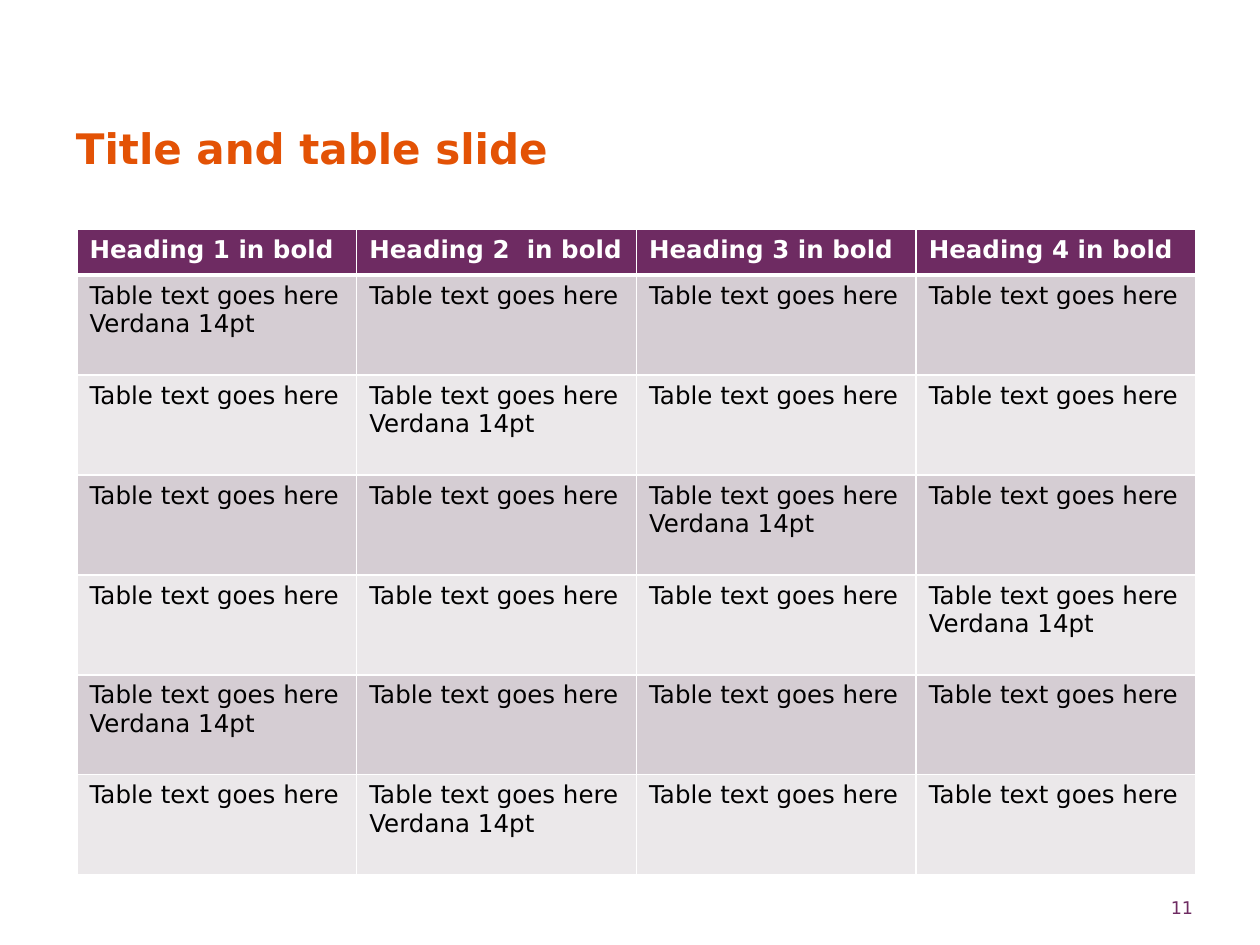
from lxml.etree import SubElement
from pptx import Presentation
from pptx.dml.color import RGBColor
from pptx.enum.text import PP_ALIGN
from pptx.oxml.ns import qn
from pptx.util import Emu, Pt

PX = 914400 / 126
COLORS = {
    "title": "E35205",
    "purple": "6E2B62",
    "band_dark": "D5CDD3",
    "band_light": "EBE8EA",
    "text": "000000",
    "white": "FFFFFF",
}
HEADINGS = ["Heading 1 in bold", "Heading 2  in bold", "Heading 3 in bold", "Heading 4 in bold"]
BODY_ROWS = 6
CELL_TEXT = "Table text goes here"
FONT_NOTE = "Verdana 14pt"


def px(length):
    return Emu(round(length * PX))


class SlideBuilder:
    def __init__(self, slide, font_name="DejaVu Sans"):
        self.slide = slide
        self.font_name = font_name

    def style(self, paragraph, size, color, bold=False):
        font = paragraph.font
        font.name = self.font_name
        font.size = Pt(size)
        font.bold = bold
        font.color.rgb = RGBColor.from_string(COLORS[color])

    def text(self, box, content, size, color, bold=False, align=PP_ALIGN.LEFT, line_spacing=None):
        shape = self.slide.shapes.add_textbox(*map(px, box))
        frame = shape.text_frame
        frame.word_wrap = True
        frame.margin_left = frame.margin_top = frame.margin_right = frame.margin_bottom = 0
        paragraph = frame.paragraphs[0]
        paragraph.text = content
        paragraph.alignment = align
        if line_spacing:
            paragraph.line_spacing = Pt(line_spacing)
        self.style(paragraph, size, color, bold)

    def borders(self, cell, widths):
        """Add white borders; widths maps a side (L, R, T, B) to points."""
        properties = cell._tc.get_or_add_tcPr()
        for side, width in widths.items():
            line = SubElement(properties, qn(f"a:ln{side}"), w=str(Pt(width)))
            fill = SubElement(line, qn("a:solidFill"))
            SubElement(fill, qn("a:srgbClr"), val=COLORS["white"])

    def cell(self, cell, content, fill, color, bold, top, bottom):
        self.borders(cell, {"L": 1, "R": 1, "T": top, "B": bottom})
        cell.fill.solid()
        cell.fill.fore_color.rgb = RGBColor.from_string(COLORS[fill])
        cell.text = content
        for paragraph in cell.text_frame.paragraphs:
            self.style(paragraph, 14, color, bold)

    def table(self, box, rows, header_height, row_height):
        """Draw a table with a header row and alternating body bands."""
        shape = self.slide.shapes.add_table(len(rows), len(rows[0]), *map(px, box))
        table = shape.table
        for column in table.columns:
            column.width = px(box[2] / len(rows[0]))
        for index, contents in enumerate(rows):
            header = index == 0
            table.rows[index].height = px(header_height if header else row_height)
            band = "band_dark" if index % 2 else "band_light"
            for column, content in enumerate(contents):
                self.cell(
                    table.cell(index, column),
                    content,
                    fill="purple" if header else band,
                    color="white" if header else "text",
                    bold=header,
                    top=3 if index == 1 else 1,
                    bottom=3 if header else 1,
                )


def body_row(row):
    """Return a row whose font note moves one column to the right each time."""
    columns = len(HEADINGS)
    return [
        f"{CELL_TEXT}\n{FONT_NOTE}" if column == row % columns else CELL_TEXT
        for column in range(columns)
    ]


def main():
    presentation = Presentation()
    presentation.slide_width = px(1260)
    presentation.slide_height = px(945)
    builder = SlideBuilder(presentation.slides.add_slide(presentation.slide_layouts[6]))

    rows = [HEADINGS] + [body_row(row) for row in range(BODY_ROWS)]
    builder.table((77, 229, 1119, 646), rows, header_height=46, row_height=100)
    builder.text((76, 120, 1119, 63), "Title and table slide", 24, "title", bold=True, line_spacing=30)
    builder.text((1124, 897, 69, 29), "11", 10, "purple", align=PP_ALIGN.RIGHT)

    presentation.save("out.pptx")


if __name__ == "__main__":
    main()
